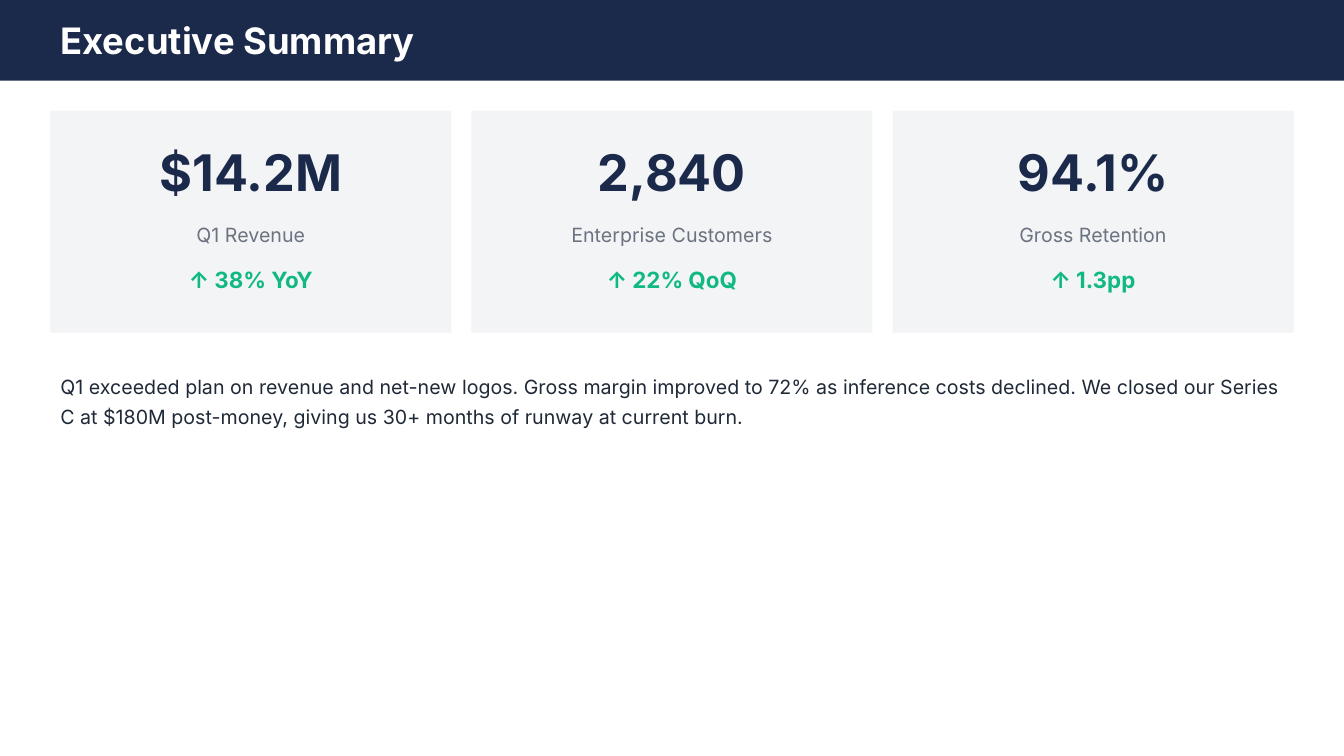
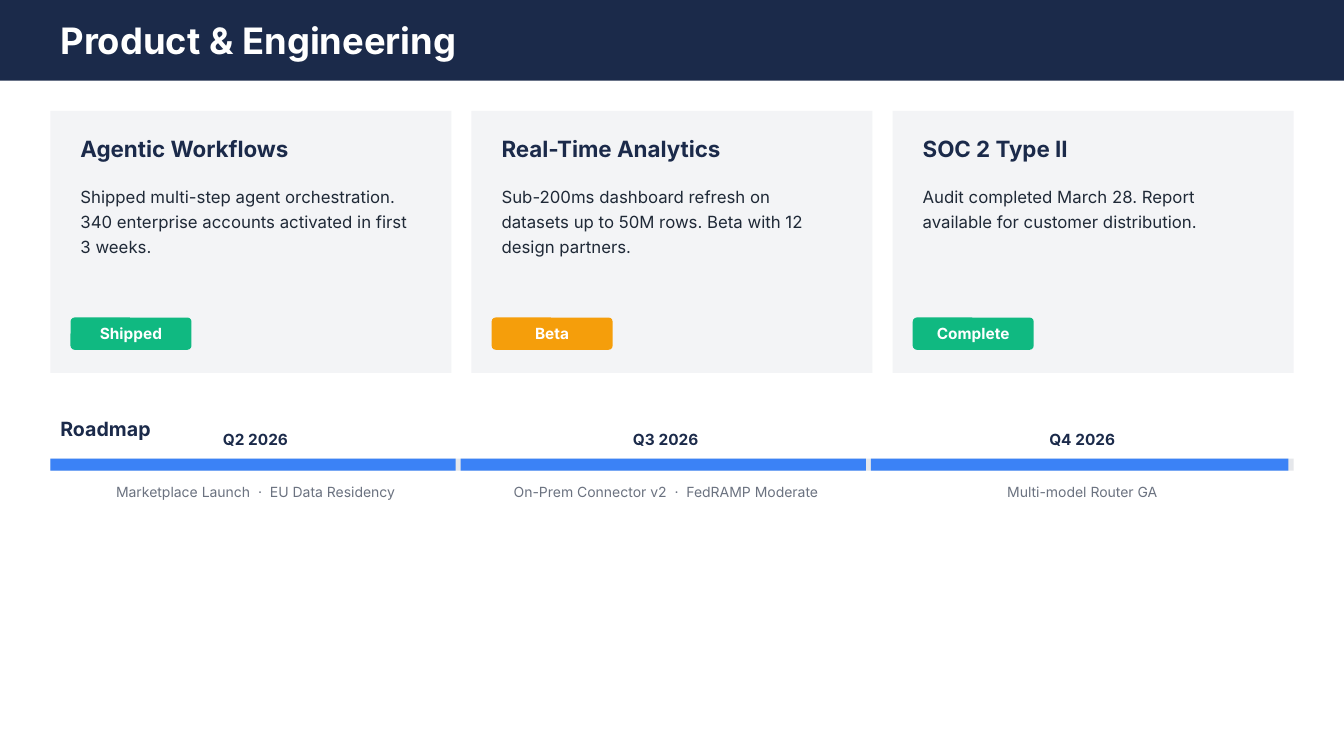
"""Build the executive summary and product slides of a quarterly review."""
from pptx import Presentation
from pptx.dml.color import RGBColor
from pptx.enum.shapes import MSO_SHAPE
from pptx.enum.text import MSO_ANCHOR, MSO_AUTO_SIZE, PP_ALIGN
from pptx.util import Pt

COLORS = {
    "navy": "1B2A4A", "white": "FFFFFF", "card": "F3F4F6", "body": "1F2937",
    "muted": "6B7280", "green": "10B981", "amber": "F59E0B",
    "track": "E5E7EB", "blue": "3B82F6",
}
FONT = "Inter"
WIDTH, HEIGHT = 960, 540
MARGIN, GAP, INSET = 36, 14.4, 7.2
CONTENT = WIDTH - 2 * MARGIN
CARD_W = (CONTENT - 2 * GAP) / 3
CARD_TOP = 79.2
BAR_TOP, BAR_H, BAR_GAP = 327.6, 8.64, 3.6


class Deck:
    def __init__(self):
        self.prs = Presentation()
        self.prs.slide_width, self.prs.slide_height = Pt(WIDTH), Pt(HEIGHT)
        self.s = None

    def fill(self, sp, color):
        sp.fill.solid()
        sp.fill.fore_color.rgb = RGBColor.from_string(COLORS[color])

    def set_text(self, sp, text, size, color, bold=False, align=PP_ALIGN.LEFT,
                 anchor=MSO_ANCHOR.MIDDLE, spacing=None):
        tf = sp.text_frame
        tf.word_wrap = True
        tf.auto_size = MSO_AUTO_SIZE.NONE
        tf.vertical_anchor = anchor
        p = tf.paragraphs[0]
        p.text = text
        p.alignment = align
        p.line_spacing = spacing
        p.font.name, p.font.size, p.font.bold = FONT, Pt(size), bold
        p.font.color.rgb = RGBColor.from_string(COLORS[color])

    def slide(self, title):
        self.s = self.prs.slides.add_slide(self.prs.slide_layouts[5])
        sp = self.s.shapes.title
        sp.left, sp.top, sp.width, sp.height = Pt(0), Pt(0), Pt(WIDTH), Pt(57.6)
        self.fill(sp, "navy")
        self.set_text(sp, title, 26, "white", bold=True)
        sp.text_frame.margin_left = Pt(MARGIN + INSET)

    def box(self, x, y, w, h, color, kind=MSO_SHAPE.RECTANGLE):
        sp = self.s.shapes.add_shape(kind, Pt(x), Pt(y), Pt(w), Pt(h))
        self.fill(sp, color)
        sp.line.fill.background()
        sp.shadow.inherit = False
        return sp

    def text(self, x, y, w, h, text, size, color, **style):
        sp = self.s.shapes.add_textbox(Pt(x), Pt(y), Pt(w), Pt(h))
        self.set_text(sp, text, size, color, **style)

    def card(self, column, height):
        x = MARGIN + column * (CARD_W + GAP)
        self.box(x, CARD_TOP, CARD_W, height, "card")
        return x

    def metric(self, column, value, label, change):
        x = self.card(column, 158.4)
        center = PP_ALIGN.CENTER
        self.text(x, 93.6, CARD_W, 57.6, value, 36, "navy", bold=True, align=center)
        self.text(x, 151.2, CARD_W, 32.4, label, 14, "muted", align=center)
        self.text(x, 183.6, CARD_W, 32.4, change, 16, "green", bold=True, align=center)

    def feature(self, column, name, detail, status, color):
        x = self.card(column, 187.2) + GAP
        w = CARD_W - 2 * GAP
        self.text(x, 90, w, 32.4, name, 16, "navy", bold=True)
        self.text(x, 126, w, 86.4, detail, 12, "body",
                  anchor=MSO_ANCHOR.TOP, spacing=1.25)
        badge = self.box(x, 226.8, 86.4, 23.04, color, MSO_SHAPE.ROUNDED_RECTANGLE)
        badge.adjustments[0] = 0.125
        self.set_text(badge, status, 11, "white", bold=True, align=PP_ALIGN.CENTER)

    def phase(self, x, w, quarter, items):
        self.box(x, BAR_TOP, w - BAR_GAP, BAR_H, "blue")
        self.text(x, 302.4, w, 21.6, quarter, 11, "navy", bold=True,
                  align=PP_ALIGN.CENTER, anchor=MSO_ANCHOR.BOTTOM)
        self.text(x, 342, w, 28.8, items, 10, "muted",
                  align=PP_ALIGN.CENTER, anchor=MSO_ANCHOR.TOP)

    def roadmap(self, phases):
        self.text(MARGIN, 291.6, 144, 28.8, "Roadmap", 14, "navy", bold=True)
        self.box(MARGIN, BAR_TOP, CONTENT, BAR_H, "track")
        x = MARGIN
        for share, quarter, items in phases:
            w = CONTENT * share
            self.phase(x, w, quarter, items)
            x += w


def main():
    deck = Deck()

    deck.slide("Executive Summary")
    metrics = [
        ("$14.2M", "Q1 Revenue", "↑ 38% YoY"),
        ("2,840", "Enterprise Customers", "↑ 22% QoQ"),
        ("94.1%", "Gross Retention", "↑ 1.3pp"),
    ]
    for column, metric in enumerate(metrics):
        deck.metric(column, *metric)
    deck.text(MARGIN, 259.2, CONTENT, 100.8,
              "Q1 exceeded plan on revenue and net-new logos. Gross margin improved "
              "to 72% as inference costs declined. We closed our Series C at $180M "
              "post-money, giving us 30+ months of runway at current burn.",
              14, "body", anchor=MSO_ANCHOR.TOP, spacing=1.3)

    deck.slide("Product & Engineering")
    features = [
        ("Agentic Workflows",
         "Shipped multi-step agent orchestration. 340 enterprise accounts "
         "activated in first 3 weeks.", "Shipped", "green"),
        ("Real-Time Analytics",
         "Sub-200ms dashboard refresh on datasets up to 50M rows. Beta with 12 "
         "design partners.", "Beta", "amber"),
        ("SOC 2 Type II",
         "Audit completed March 28. Report available for customer distribution.",
         "Complete", "green"),
    ]
    for column, feature in enumerate(features):
        deck.feature(column, *feature)
    deck.roadmap([
        (0.33, "Q2 2026", "Marketplace Launch  ·  EU Data Residency"),
        (0.33, "Q3 2026", "On-Prem Connector v2  ·  FedRAMP Moderate"),
        (0.34, "Q4 2026", "Multi-model Router GA"),
    ])

    deck.prs.save("out.pptx")


if __name__ == "__main__":
    main()
